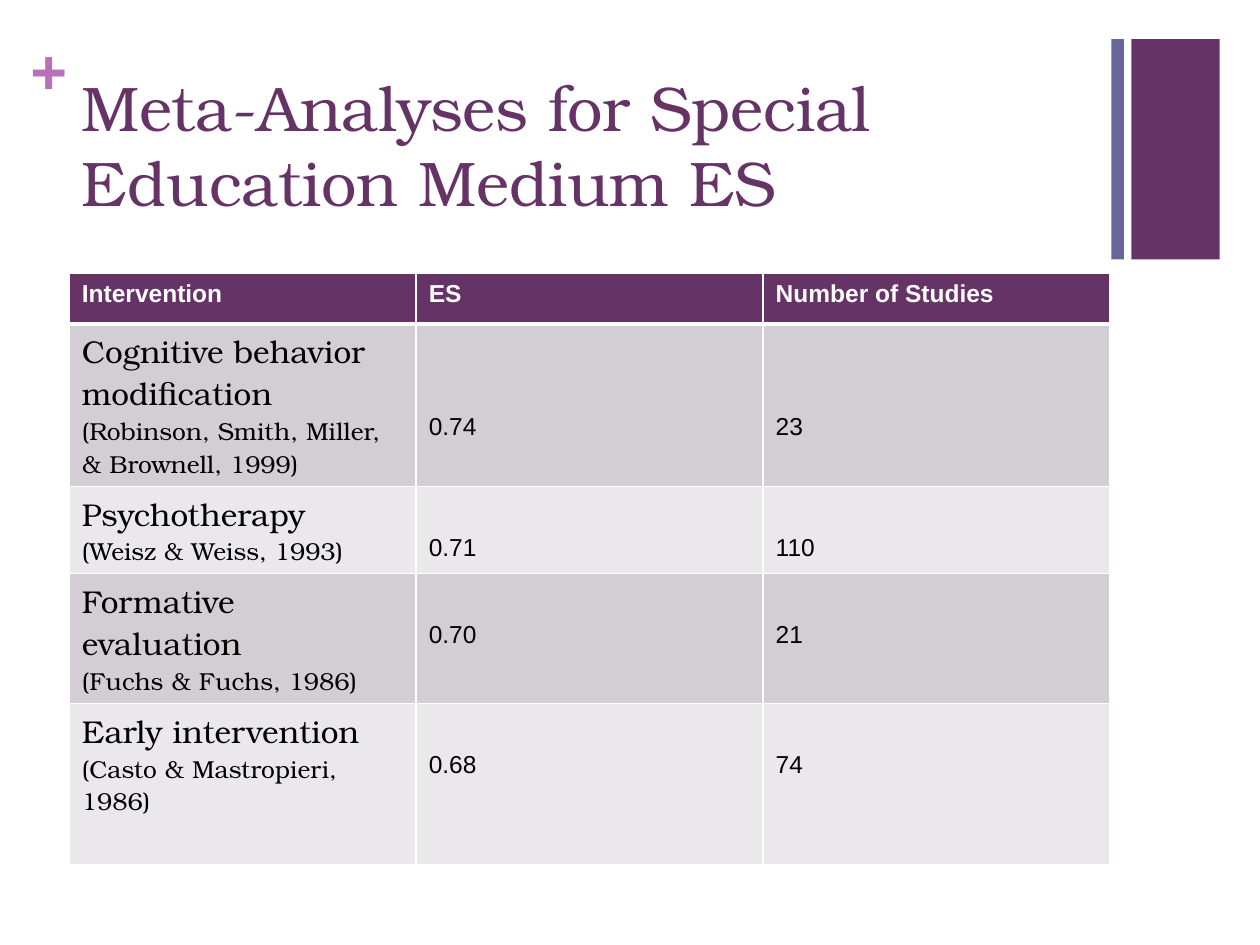
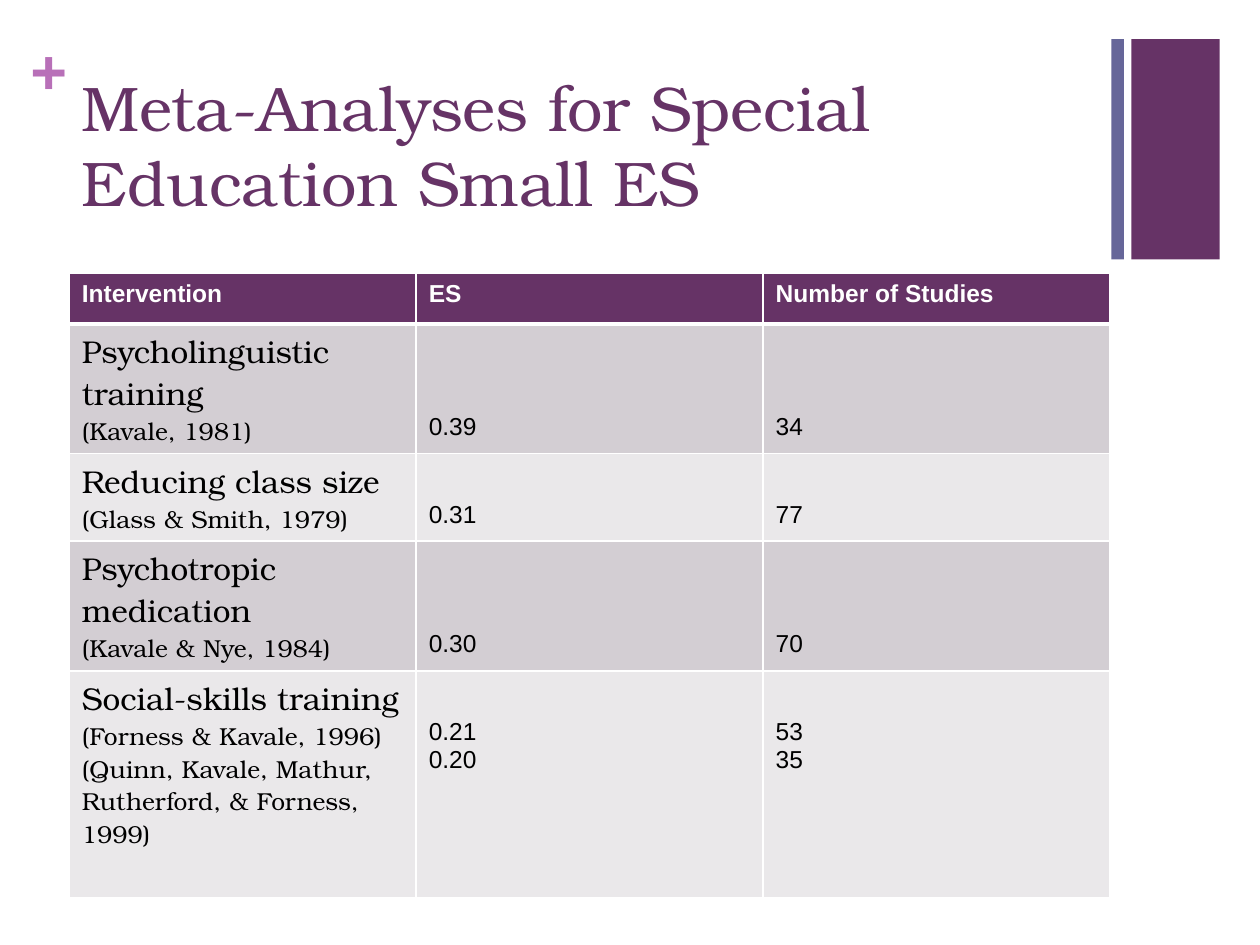
import pptx
import pptx.dml.color
import pptx.enum.shapes
import pptx.enum.text
import pptx.oxml
import pptx.oxml.ns
import pptx.util

Inches = pptx.util.Inches
PURPLE, SLATE, ORCHID = "663366", "666699", "B870B8"
WHITE, BLACK = "FFFFFF", "000000"
BAND_FILLS = ["D3CED3", "EAE8EA"]
SERIF, SANS = "TeX Gyre Bonum", "Arial"
HEADINGS = ["Intervention", "ES", "Number of Studies"]
CELL_MARGIN = 0.05
LEAD_LINE = 0.33

# Each study row: intervention, citation, effect sizes, study counts, lines above the values, row height
SLIDES = [
    ("Meta-Analyses for Special Education Medium ES", [
        ("Cognitive behavior modification", "(Robinson, Smith, Miller, & Brownell, 1999)", "0.74", "23", 2, 1.29),
        ("Psychotherapy", "(Weisz & Weiss, 1993)", "0.71", "110", 1, 0.69),
        ("Formative evaluation", "(Fuchs & Fuchs, 1986)", "0.70", "21", 1, 1.03),
        ("Early intervention", "(Casto & Mastropieri, 1986)", "0.68", "74", 1, 1.28),
    ]),
    ("Meta-Analyses for Special Education Small ES", [
        ("Psycholinguistic training", "(Kavale, 1981)", "0.39", "34", 2, 1.03),
        ("Reducing class size", "(Glass & Smith, 1979)", "0.31", "77", 1, 0.69),
        ("Psychotropic medication", "(Kavale & Nye, 1984)", "0.30", "70", 2, 1.03),
        ("Social-skills training",
         "(Forness & Kavale, 1996) (Quinn, Kavale, Mathur, Rutherford, & Forness, 1999)",
         "0.21\n0.20", "53\n35", 1, 1.8),
    ]),
]


def paint(target, color):
    if hasattr(target, "solid"):
        target.solid()
        target.fore_color.rgb = pptx.dml.color.RGBColor.from_string(color)
    else:
        target.color.rgb = pptx.dml.color.RGBColor.from_string(color)


def format_text(para, size, font, color, bold=False):
    for span in para.runs:
        span.font.size = pptx.util.Pt(size)
        span.font.name = font
        span.font.bold = bold
        paint(span.font, color)


deck = pptx.Presentation()
deck.slide_width, deck.slide_height = Inches(10), Inches(7.5)
layout = deck.slide_layouts.get_by_name("Title Only")
for holder in list(layout.placeholders):
    if holder.placeholder_format.type != pptx.enum.shapes.PP_PLACEHOLDER.TITLE:
        holder.element.getparent().remove(holder.element)
layout_title = layout.placeholders[0]
layout_title.left, layout_title.top = Inches(0.55), Inches(0.53)
layout_title.width, layout_title.height = Inches(8.26), Inches(1.22)

pages = [deck.slides.add_slide(layout) for _ in SLIDES]

decorations = []
for left, width, color in [(8.98, 0.7, PURPLE), (8.82, 0.1, SLATE)]:
    bar = pages[0].shapes.add_shape(pptx.enum.shapes.MSO_SHAPE.RECTANGLE,
                                    Inches(left), Inches(0.31), Inches(width), Inches(1.75))
    bar.shadow.inherit = False
    paint(bar.fill, color)
    bar.line.fill.background()
    decorations.append(bar)

plus = pages[0].shapes.add_textbox(Inches(0.24), Inches(0.25), Inches(0.29), Inches(0.61))
frame = plus.text_frame
frame.margin_left = frame.margin_right = frame.margin_top = frame.margin_bottom = 0
frame.text = "+"
format_text(frame.paragraphs[0], 36, SANS, ORCHID, True)
decorations.append(plus)

for shape in decorations:
    layout.shapes.element.append(shape.element)

for page, (heading, studies) in zip(pages, SLIDES):
    title = page.shapes.title.text_frame
    title.text = heading
    title.word_wrap = True
    title.auto_size = pptx.enum.text.MSO_AUTO_SIZE.NONE
    title.vertical_anchor = pptx.enum.text.MSO_ANCHOR.MIDDLE
    title.paragraphs[0].alignment = pptx.enum.text.PP_ALIGN.LEFT
    format_text(title.paragraphs[0], 36, SERIF, PURPLE)

    heights = [0.4] + [study[-1] for study in studies]
    table = page.shapes.add_table(len(heights), len(HEADINGS), Inches(0.55), Inches(2.17),
                                  Inches(8.26), Inches(sum(heights))).table
    table.horz_banding = False
    for row, height in zip(table.rows, heights):
        row.height = Inches(height)

    for row_index in range(len(heights)):
        for column in range(len(HEADINGS)):
            cell = table.cell(row_index, column)
            cell.margin_top = cell.margin_bottom = Inches(CELL_MARGIN)
            properties = cell._tc.get_or_add_tcPr()
            for side in ["L", "R", "T", "B"]:
                thick = (row_index, side) in [(0, "B"), (1, "T")]
                properties.append(pptx.oxml.parse_xml(
                    f'<a:ln{side} {pptx.oxml.ns.nsdecls("a")} w="{pptx.util.Pt(3 if thick else 1)}">'
                    f'<a:solidFill><a:srgbClr val="{WHITE}"/></a:solidFill></a:ln{side}>'))

            if row_index == 0:
                paint(cell.fill, PURPLE)
                cell.text_frame.text = HEADINGS[column]
                format_text(cell.text_frame.paragraphs[0], 14, SANS, WHITE, True)
                continue

            paint(cell.fill, BAND_FILLS[(row_index - 1) % 2])
            intervention, citation, effects, counts, lead_lines, _ = studies[row_index - 1]
            if column == 0:
                cell.text_frame.text = f"{intervention}\n{citation}"
                for para, size in zip(cell.text_frame.paragraphs, [18, 14]):
                    format_text(para, size, SERIF, BLACK)
            else:
                cell.margin_top = Inches(CELL_MARGIN + LEAD_LINE * lead_lines)
                cell.text_frame.text = [effects, counts][column - 1]
                for para in cell.text_frame.paragraphs:
                    format_text(para, 14, SANS, BLACK)

deck.save("out.pptx")
